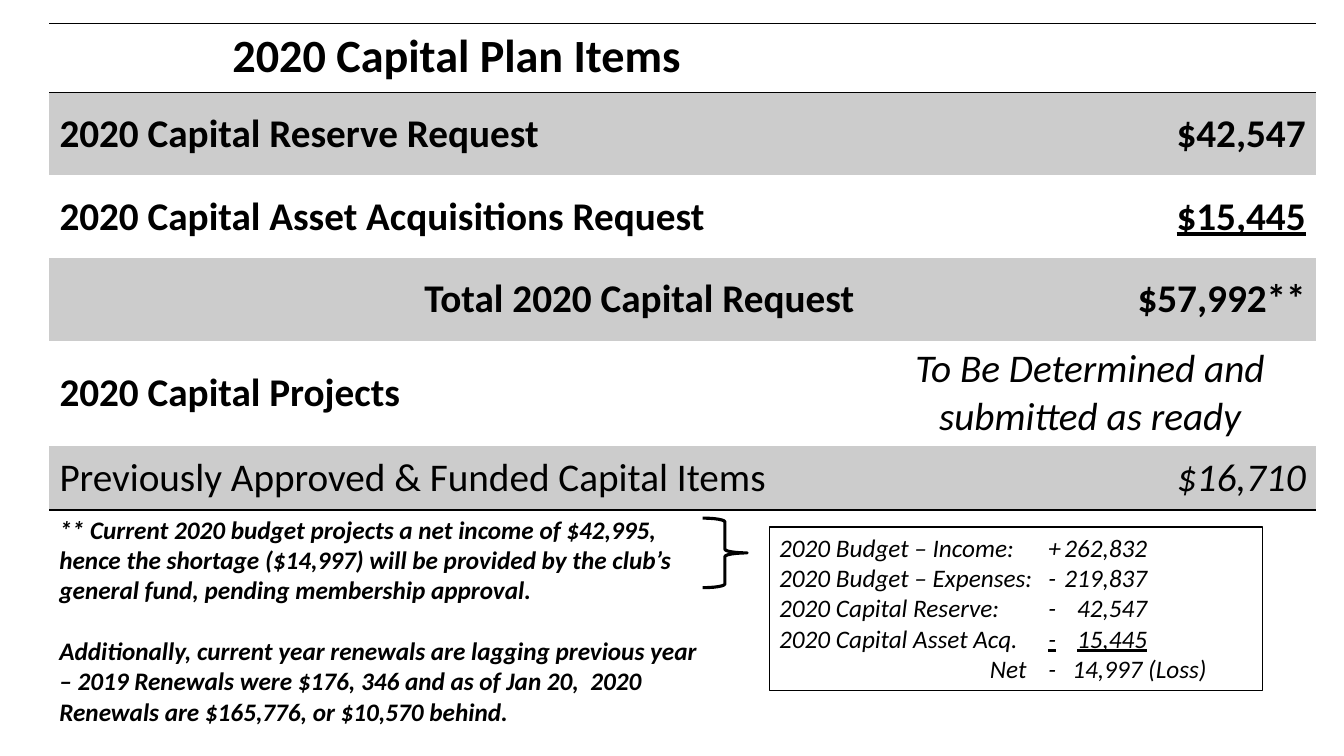
"""Build the 2020 capital plan slide."""
from dataclasses import dataclass

from lxml.etree import SubElement
from pptx import Presentation
from pptx.dml.color import RGBColor
from pptx.enum.shapes import MSO_SHAPE as Shape
from pptx.enum.text import MSO_ANCHOR as Anchor, PP_ALIGN as Align
from pptx.oxml import parse_xml
from pptx.oxml.ns import nsdecls, qn
from pptx.util import Inches, Pt

BLACK = RGBColor(0x00, 0x00, 0x00)
WHITE = RGBColor(0xFF, 0xFF, 0xFF)
BAND = RGBColor(0xCC, 0xCC, 0xCC)
FONT = "Calibri"
NO_STYLE = "{2D5ABB26-0587-4C30-8999-92F81FD0307C}"
COLUMN_WIDTHS = (8.08, 4.48)


@dataclass(frozen=True)
class Entry:
    """One table cell's text and look."""
    text: str = ""
    align: Align = Align.LEFT
    size: int = 28
    bold: bool = True
    italic: bool = False
    underline: bool = False
    anchor: Anchor = Anchor.MIDDLE


@dataclass(frozen=True)
class PlanRow:
    """One table row with its height, band and ruled sides."""
    height: float
    item: Entry
    amount: Entry
    banded: bool = False
    rules: tuple[str, ...] = ()


@dataclass(frozen=True)
class BudgetLine:
    """One line of the budget box, set on tab stops."""
    label: str
    figure: str
    stops: tuple[tuple[float, str], ...] = ((2.67, "l"), (3.65, "r"))
    underline: bool = False


PLAN = (
    PlanRow(0.69, Entry("2020 Capital Plan Items", Align.CENTER, 33, anchor=Anchor.TOP),
            Entry(), rules=("T", "B")),
    PlanRow(0.82, Entry("2020 Capital Reserve Request"),
            Entry("$42,547", Align.RIGHT), banded=True),
    PlanRow(0.82, Entry("2020 Capital Asset Acquisitions Request"),
            Entry("$15,445", Align.RIGHT, underline=True)),
    PlanRow(0.82, Entry("Total 2020 Capital Request", Align.RIGHT),
            Entry("$57,992**", Align.RIGHT), banded=True),
    PlanRow(1.04, Entry("2020 Capital Projects"),
            Entry("To Be Determined and submitted as ready", Align.CENTER,
                  bold=False, italic=True, anchor=Anchor.TOP)),
    PlanRow(0.63, Entry("Previously Approved & Funded Capital Items", bold=False),
            Entry("$16,710", Align.RIGHT, bold=False, italic=True),
            banded=True, rules=("B",)),
)
NOTES = (
    "** Current 2020 budget projects a net income of $42,995, hence the shortage "
    "($14,997) will be provided by the club’s general fund, pending membership approval.",
    "Additionally, current year renewals are lagging previous year – 2019 Renewals were "
    "$176, 346 and as of Jan 20,  2020 Renewals are $165,776, or $10,570 behind.",
)
BUDGET = (
    BudgetLine("2020 Budget – Income:\t", "+\t262,832"),
    BudgetLine("2020 Budget – Expenses:\t", "-\t219,837"),
    BudgetLine("2020 Capital Reserve:\t", "-\t42,547"),
    BudgetLine("2020 Capital Asset Acq.\t", "-\t15,445", underline=True),
    BudgetLine("\tNet\t", "-\t14,997 (Loss)", ((2.09, "l"), (2.67, "l"), (4.24, "r"))),
)


def set_font(font, size: int, bold: bool = False, italic: bool = False) -> None:
    """Apply the slide's typeface and colour."""
    font.name, font.size, font.bold, font.italic = FONT, Pt(size), bold, italic
    font.color.rgb = BLACK


def rule_cell(cell, sides: tuple[str, ...]) -> None:
    """Draw thin black borders on the given sides of a cell."""
    properties = cell._tc.get_or_add_tcPr()
    for index, side in enumerate(sides):
        properties.insert(index, parse_xml(
            f'<a:ln{side} {nsdecls("a")} w="{Pt(1)}"><a:solidFill>'
            f'<a:srgbClr val="{BLACK}"/></a:solidFill></a:ln{side}>'))


def fill_cell(cell, entry: Entry, row: PlanRow) -> None:
    """Write and style one table cell."""
    if row.banded:
        cell.fill.solid()
        cell.fill.fore_color.rgb = BAND
    else:
        cell.fill.background()
    rule_cell(cell, row.rules)
    cell.vertical_anchor = entry.anchor
    para = cell.text_frame.paragraphs[0]
    para.text, para.alignment = entry.text, entry.align
    set_font(para.font, entry.size, entry.bold, entry.italic)
    para.font.underline = entry.underline


def add_plan(page) -> None:
    """Add the capital plan table."""
    frame = page.shapes.add_table(
        len(PLAN), len(COLUMN_WIDTHS), Inches(0.49), Inches(0.23),
        Inches(sum(COLUMN_WIDTHS)), Inches(sum(row.height for row in PLAN)))
    table = frame.table
    table.first_row = table.horz_banding = False
    frame._element.find(".//" + qn("a:tableStyleId")).text = NO_STYLE
    for column, width in zip(table.columns, COLUMN_WIDTHS):
        column.width = Inches(width)
    for index, row in enumerate(PLAN):
        table.rows[index].height = Inches(row.height)
        for cell, entry in zip(table.rows[index].cells, (row.item, row.amount)):
            fill_cell(cell, entry, row)


def add_notes(page) -> None:
    """Add the footnotes below the table."""
    box = page.shapes.add_textbox(Inches(0.49), Inches(5.05), Inches(6.65), Inches(2.22))
    box.text_frame.word_wrap = True
    box.text_frame.text = "\n".join(NOTES)
    for para in box.text_frame.paragraphs:
        set_font(para.font, 18, bold=True, italic=True)
    box.text_frame.paragraphs[-1].space_before = Pt(22)


def add_outline(page, kind: Shape, place: tuple[float, ...], weight: float):
    """Add a white shape with a black outline."""
    shape = page.shapes.add_shape(kind, *map(Inches, place))
    shape.shadow.inherit = False
    shape.fill.solid()
    shape.fill.fore_color.rgb = WHITE
    shape.line.color.rgb = BLACK
    shape.line.width = Pt(weight)
    return shape


def add_budget(page) -> None:
    """Add the budget box with its aligned figures."""
    frame = add_outline(page, Shape.RECTANGLE, (7.63, 5.23, 4.89, 1.62), 1).text_frame
    frame.word_wrap = True
    frame.vertical_anchor = Anchor.TOP
    for index, line in enumerate(BUDGET):
        para = frame.add_paragraph() if index else frame.paragraphs[0]
        para.alignment = Align.LEFT
        set_font(para.font, 18, italic=True)
        para.add_run().text = line.label
        figure = para.add_run()
        figure.text = line.figure
        if line.underline:
            figure.font.underline = True
        properties = para._p.get_or_add_pPr()
        stops = SubElement(properties, qn("a:tabLst"))
        properties.insert(0, stops)
        for position, align in line.stops:
            SubElement(stops, qn("a:tab"), pos=str(Inches(position)), algn=align)


def main() -> None:
    """Build and save the deck."""
    deck = Presentation()
    deck.slide_width, deck.slide_height = Inches(13.33), Inches(7.5)
    page = deck.slides.add_slide(deck.slide_layouts[6])
    add_plan(page)
    add_notes(page)
    add_budget(page)
    add_outline(page, Shape.RIGHT_BRACE, (6.97, 5.14, 0.44, 0.69), 2.25)
    deck.save("out.pptx")


if __name__ == "__main__":
    main()
